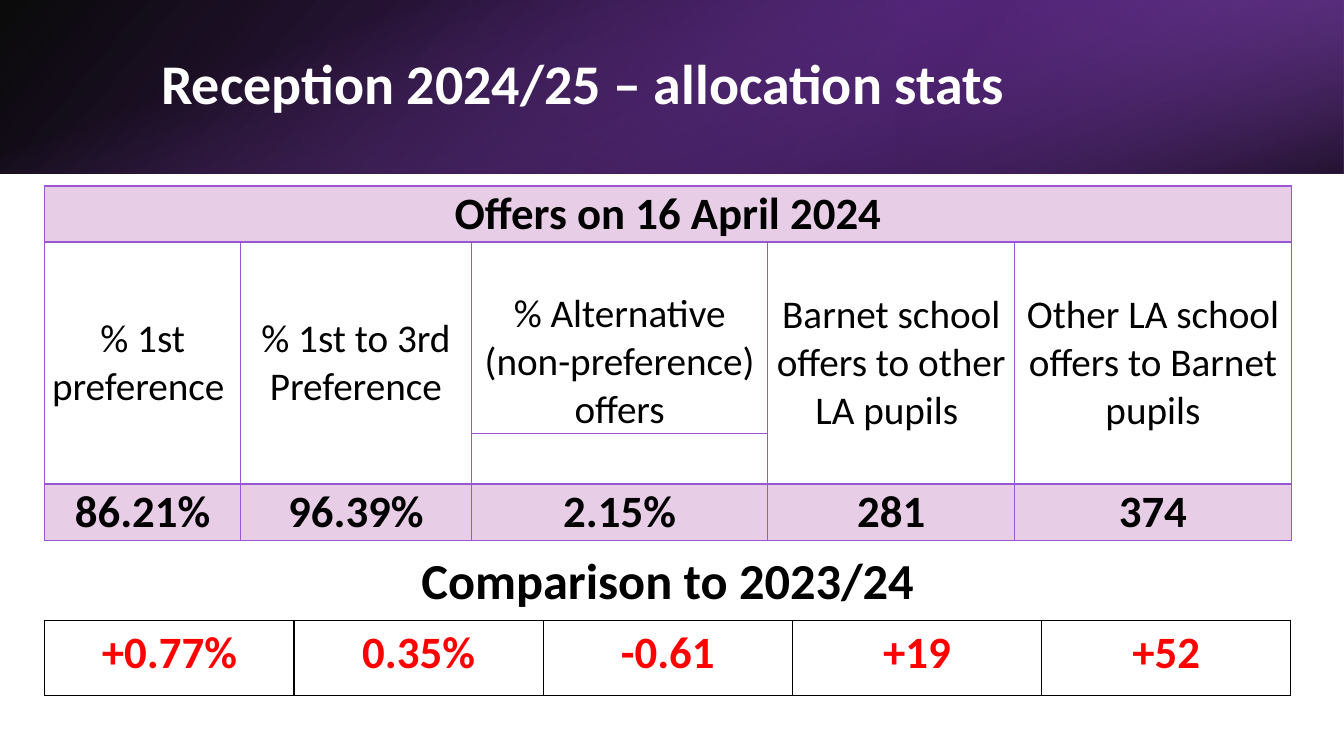
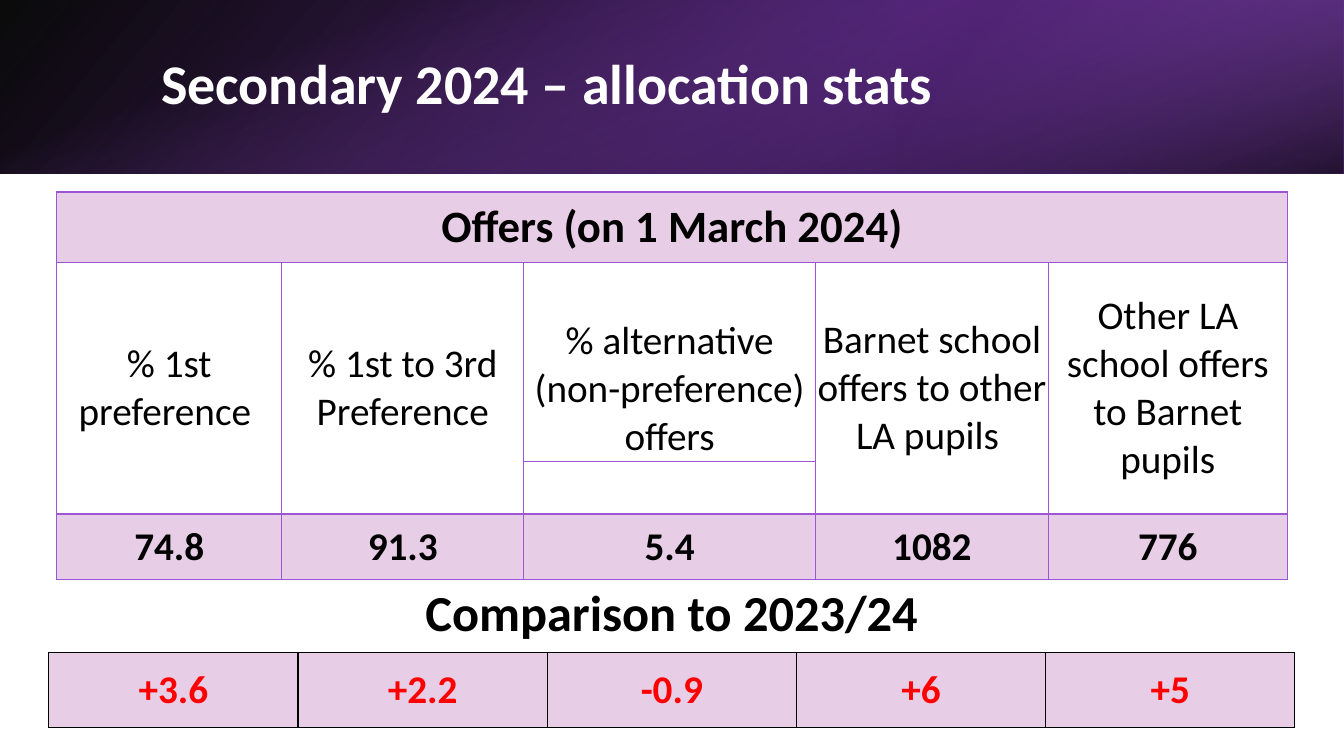
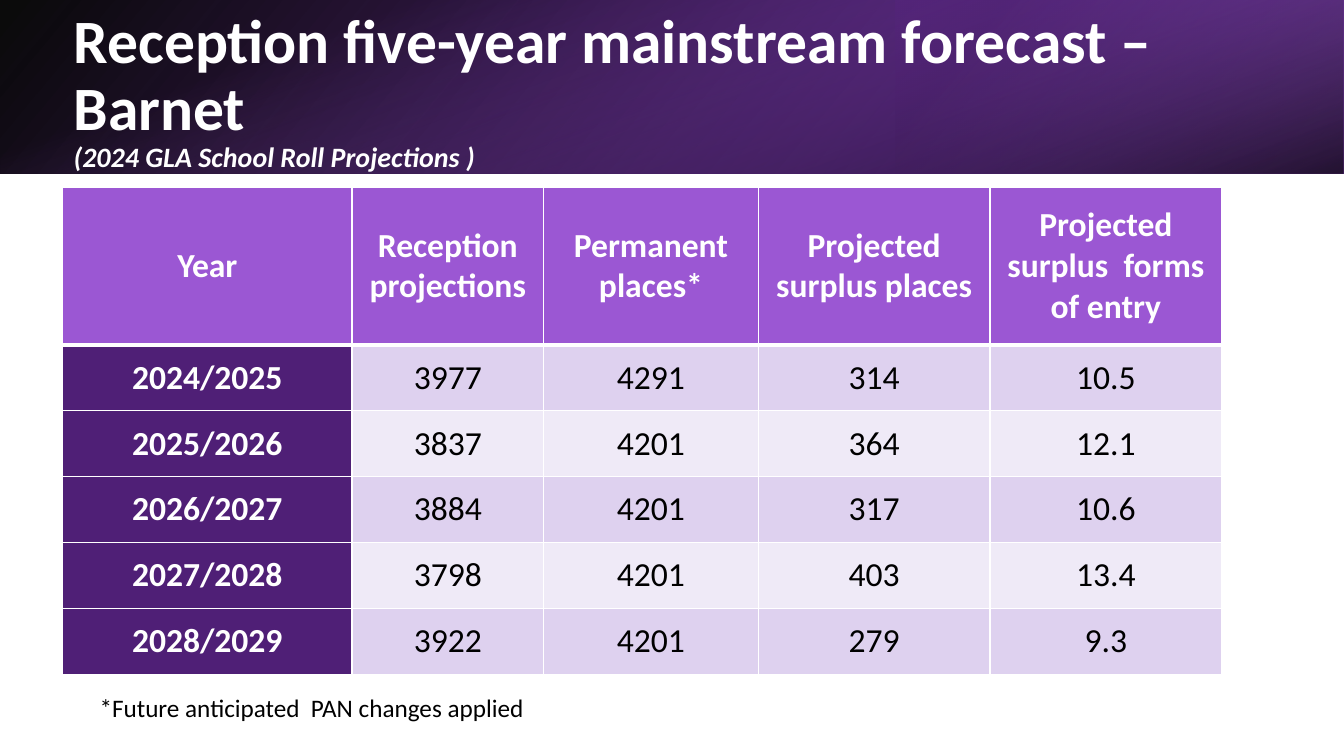
from lxml import etree
from pptx import Presentation
from pptx.dml.color import RGBColor
from pptx.enum.shapes import MSO_SHAPE
from pptx.enum.text import MSO_ANCHOR, MSO_AUTO_SIZE, PP_ALIGN
from pptx.oxml.ns import qn
from pptx.util import Cm, Pt

RECTANGLE = MSO_SHAPE.RECTANGLE
TOP, MIDDLE, BOTTOM = MSO_ANCHOR.TOP, MSO_ANCHOR.MIDDLE, MSO_ANCHOR.BOTTOM
LEFT, CENTER = PP_ALIGN.LEFT, PP_ALIGN.CENTER
NO_AUTOFIT = MSO_AUTO_SIZE.NONE
PLAIN_TABLE_STYLE = "{2D5ABB26-0587-4C30-8999-92F81FD0307C}"

FONT = "Calibri"
BLACK, WHITE, RED = "000000", "FFFFFF", "FF0000"
PURPLE, DARK_PURPLE, PINK = "9B57D3", "4F1F76", "E8CDE7"
STRIPES = ("DED1EF", "EFEAF7")

SLIDE_WIDTH, SLIDE_HEIGHT, BAND_HEIGHT = 33.87, 19.05, 4.37
BAND_OFFSET = (SLIDE_WIDTH - BAND_HEIGHT) / 2
# Stops are (position %, colour, opacity %).
BAND_LAYERS = [
    dict(box=(0, 0, SLIDE_WIDTH, BAND_HEIGHT), rotation=0, flip=True, angle=140,
         stops=[(0, BLACK, 96), (100, "762EB1", 100)]),
    dict(box=(22.58, 0, 11.29, BAND_HEIGHT), rotation=180, flip=True, angle=320,
         stops=[(19, DARK_PURPLE, 68), (100, PURPLE, 79)]),
    dict(box=(BAND_OFFSET, -BAND_OFFSET, BAND_HEIGHT, SLIDE_WIDTH), rotation=90,
         flip=False, angle=340, stops=[(23, PURPLE, 0), (99, BLACK, 74)]),
]

STATS_TITLE_BOX = (3.81, 0.95, 27.89, 2.44)
FORECAST_TITLE_BOX = (1.6, 0.52, 31.75, 3.61)
TIGHT, NORMAL = (0.03, 0), (0.25, 0.13)  # side and top/bottom cell margins
COMPARISON_TITLE = "Comparison to 2023/24"
COMPARISON_COLUMNS, COMPARISON_ROWS = [6.28] * 5, [1.88] * 2
ALTERNATIVE_COLUMN = 2  # its label keeps to the upper of the two label rows

STATS = [
    dict(
        title="Reception 2024/25 – allocation stats",
        heading="Offers on 16 April 2024",
        labels=["% 1st preference ", "% 1st to 3rd Preference",
                "% Alternative\n(non-preference)\noffers",
                "Barnet school offers to other LA pupils ",
                "Other LA school offers to Barnet pupils"],
        values=["86.21%", "96.39%", "2.15%", "281", "374"],
        changes=["+0.77%", "0.35%", "-0.61", "+19", "+52"],
        offers_at=(1.13, 4.69), columns=[4.93, 5.82, 7.47, 6.22, 6.97],
        rows=[1.41, 4.83, 1.27, 1.41], comparison_at=(1.13, 13.76),
        value_size=32, change_fill=None, change_anchor=TOP,
    ),
    dict(
        title="Secondary 2024 – allocation stats",
        heading="Offers (on 1 March 2024)",
        labels=["% 1st preference ", "% 1st to 3rd Preference",
                "% alternative\n(non-preference)\noffers",
                "Barnet school offers to other LA pupils ",
                "Other LA school offers to Barnet pupils"],
        values=["74.8", "91.3", "5.4", "1082", "776"],
        changes=["+3.6", "+2.2", "-0.9", "+6", "+5"],
        offers_at=(1.43, 4.84), columns=[5.67, 6.1, 7.35, 5.87, 6.02],
        rows=[1.78, 5, 1.33, 1.65], comparison_at=(1.23, 14.57),
        value_size=28, change_fill=PINK, change_anchor=MIDDLE,
    ),
]

FORECAST_TITLE = "Reception five-year mainstream forecast – Barnet"
FORECAST_SUBTITLE = "(2024 GLA School Roll Projections )"
FORECAST_HEADER = ["Year", "Reception projections", "Permanent places*",
                   "Projected surplus places", "Projected surplus  forms of entry"]
FORECAST = [
    ("2024/2025", "3977", "4291", "314", "10.5"),
    ("2025/2026", "3837", "4201", "364", "12.1"),
    ("2026/2027", "3884", "4201", "317", "10.6"),
    ("2027/2028", "3798", "4201", "403", "13.4"),
    ("2028/2029", "3922", "4201", "279", "9.3"),
]
FORECAST_COLUMNS = [7.29, 4.83, 5.41, 5.84, 5.84]
FORECAST_ROWS = [3.97] + [1.66] * len(FORECAST)
FOOTNOTE = "*Future anticipated  PAN changes applied"


def rgb(value):
    return RGBColor.from_string(value)


def add_element(parent, tag, **attributes):
    element = etree.SubElement(parent, qn(tag))
    for name, value in attributes.items():
        element.set(name, str(value))
    return element


def style(para, size, color, bold=False, align=LEFT):
    para.alignment = align
    para.font.name = FONT
    para.font.size = Pt(size)
    para.font.bold = bold
    para.font.color.rgb = rgb(color)


def add_band(page):
    """Stack the gradient layers behind the title."""
    for layer in BAND_LAYERS:
        shape = page.shapes.add_shape(RECTANGLE, *map(Cm, layer["box"]))
        shape.shadow.inherit = False
        shape.line.fill.background()
        shape.rotation = layer["rotation"]
        properties = shape.element.spPr
        if layer["flip"]:
            properties.xfrm.set("flipH", "1")
        gradient = etree.Element(qn("a:gradFill"), rotWithShape="1")
        stops = add_element(gradient, "a:gsLst")
        for position, color, opacity in layer["stops"]:
            stop = add_element(stops, "a:gs", pos=position * 1000)
            shade = add_element(stop, "a:srgbClr", val=color)
            add_element(shade, "a:alpha", val=opacity * 1000)
        add_element(gradient, "a:lin", ang=layer["angle"] * 60000, scaled=0)
        properties.find(qn("a:prstGeom")).addnext(gradient)
        page.shapes.title.element.addprevious(shape.element)


def add_page(deck, title, title_box, size):
    page = deck.slides.add_slide(deck.slide_layouts[5])
    holder = page.shapes.title
    holder.left, holder.top, holder.width, holder.height = map(Cm, title_box)
    frame = holder.text_frame
    frame.text = title
    frame.word_wrap = True
    frame.auto_size = NO_AUTOFIT
    frame.vertical_anchor = MIDDLE
    para = frame.paragraphs[0]
    para.line_spacing = 0.9
    style(para, size, WHITE, bold=True)
    add_band(page)
    return page


def add_grid(page, position, columns, rows):
    """Add a table with fixed column widths and row heights, without style bands."""
    left, top = position
    frame = page.shapes.add_table(len(rows), len(columns), Cm(left), Cm(top),
                                  Cm(sum(columns)), Cm(sum(rows)))
    frame.element.find(".//" + qn("a:tableStyleId")).text = PLAIN_TABLE_STYLE
    table = frame.table
    table.first_row = table.horz_banding = False
    for column, width in zip(table.columns, columns):
        column.width = Cm(width)
    for row, height in zip(table.rows, rows):
        row.height = Cm(height)
    return table


def set_borders(cell, color, widths):
    """Widths in points by side letter: L, R, T, B."""
    properties = cell._tc.get_or_add_tcPr()
    for index, side in enumerate(side for side in "LRTB" if side in widths):
        line = etree.Element(qn("a:ln" + side), w=str(Pt(widths[side])))
        fill = add_element(line, "a:solidFill")
        add_element(fill, "a:srgbClr", val=color)
        properties.insert(index, line)


def fill_cell(cell, text, size, color=BLACK, bold=True, fill=None, anchor=MIDDLE,
              margins=TIGHT, border=PURPLE, widths=None):
    cell.text = text
    cell.vertical_anchor = anchor
    side, edge = margins
    cell.margin_left = cell.margin_right = Cm(side)
    cell.margin_top = cell.margin_bottom = Cm(edge)
    for para in cell.text_frame.paragraphs:
        style(para, size, color, bold, CENTER)
    if fill:
        cell.fill.solid()
        cell.fill.fore_color.rgb = rgb(fill)
    else:
        cell.fill.background()
    set_borders(cell, border, widths or dict(L=1, R=1, T=1, B=1))


def fill_row(table, row, texts, size, **look):
    for column, text in enumerate(texts):
        fill_cell(table.cell(row, column), text, size, **look)


def fill_heading(table, text, size, **look):
    """Merge the first row and write one heading across it."""
    last = len(table.columns) - 1
    table.cell(0, 0).merge(table.cell(0, last))
    fill_row(table, 0, [text] + [""] * last, size, **look)


def fill_labels(table, labels):
    """Write labels over rows 1 and 2, merged except in the alternative column."""
    for column, label in enumerate(labels):
        upper, lower = table.cell(1, column), table.cell(2, column)
        if column == ALTERNATIVE_COLUMN:
            fill_cell(upper, label, 28, bold=False, anchor=BOTTOM,
                      widths=dict(L=1, R=1, T=1))
            fill_cell(lower, "", 18, widths=dict(L=1, R=1, B=1.5))
        else:
            upper.merge(lower)
            fill_cell(upper, label, 28, bold=False, widths=dict(L=1, R=1, T=1, B=1.5))


def add_stats_page(deck, stats):
    page = add_page(deck, stats["title"], STATS_TITLE_BOX, 40)
    offers = add_grid(page, stats["offers_at"], stats["columns"], stats["rows"])
    widths = dict(L=1, R=1, T=1.5, B=1)
    fill_heading(offers, stats["heading"], 32, fill=PINK, widths=widths)
    fill_labels(offers, stats["labels"])
    fill_row(offers, 3, stats["values"], stats["value_size"], fill=PINK, widths=widths)

    comparison = add_grid(page, stats["comparison_at"], COMPARISON_COLUMNS, COMPARISON_ROWS)
    fill_heading(comparison, COMPARISON_TITLE, 36, anchor=TOP, margins=NORMAL,
                 border=BLACK, widths=dict(B=1))
    fill_row(comparison, 1, stats["changes"], stats["value_size"], color=RED,
             fill=stats["change_fill"], anchor=stats["change_anchor"],
             margins=NORMAL, border=BLACK)


def add_forecast_page(deck):
    page = add_page(deck, FORECAST_TITLE, FORECAST_TITLE_BOX, 44)
    para = page.shapes.title.text_frame.paragraphs[0]
    para.add_line_break()
    span = para.add_run()
    span.text = FORECAST_SUBTITLE
    span.font.size = Pt(20)
    span.font.italic = True

    table = add_grid(page, (1.58, 4.72), FORECAST_COLUMNS, FORECAST_ROWS)
    fill_row(table, 0, FORECAST_HEADER, 24, color=WHITE, fill=PURPLE, margins=NORMAL,
             border=WHITE, widths=dict(L=1, R=1, T=1, B=3))
    for row, (year, *figures) in enumerate(FORECAST, start=1):
        widths = dict(L=1, R=1, T=3 if row == 1 else 1, B=1)
        fill_row(table, row, [year, *figures], 24, bold=False, border=WHITE,
                 fill=STRIPES[(row - 1) % 2], widths=widths)
        year_cell = table.cell(row, 0)
        year_cell.fill.fore_color.rgb = rgb(DARK_PURPLE)
        style(year_cell.text_frame.paragraphs[0], 24, WHITE, True, CENTER)

    note = page.shapes.add_textbox(Cm(2.26), Cm(17.32), Cm(28.52), Cm(1.02))
    note.text_frame.word_wrap = True
    note.text_frame.text = FOOTNOTE
    style(note.text_frame.paragraphs[0], 18, BLACK)


def main():
    deck = Presentation()
    deck.slide_width, deck.slide_height = Cm(SLIDE_WIDTH), Cm(SLIDE_HEIGHT)
    for stats in STATS:
        add_stats_page(deck, stats)
    add_forecast_page(deck)
    deck.save("out.pptx")


if __name__ == "__main__":
    main()
